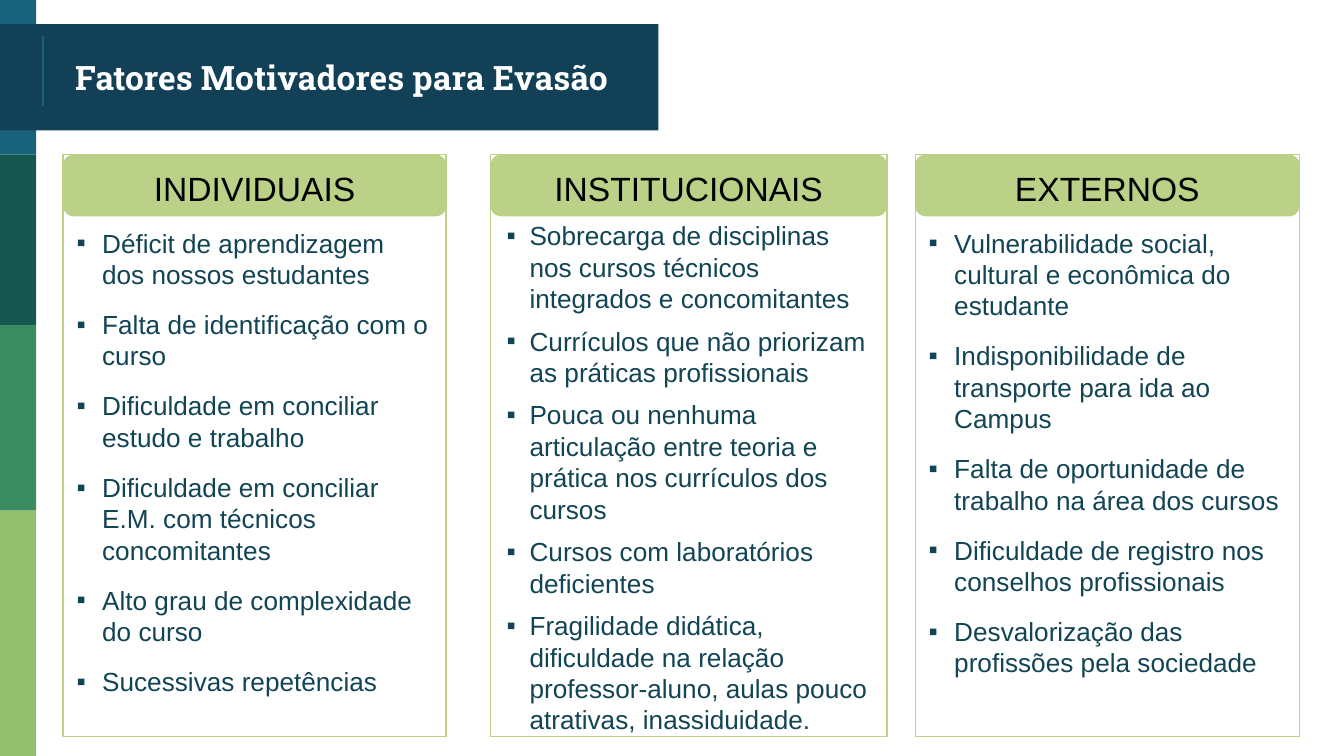
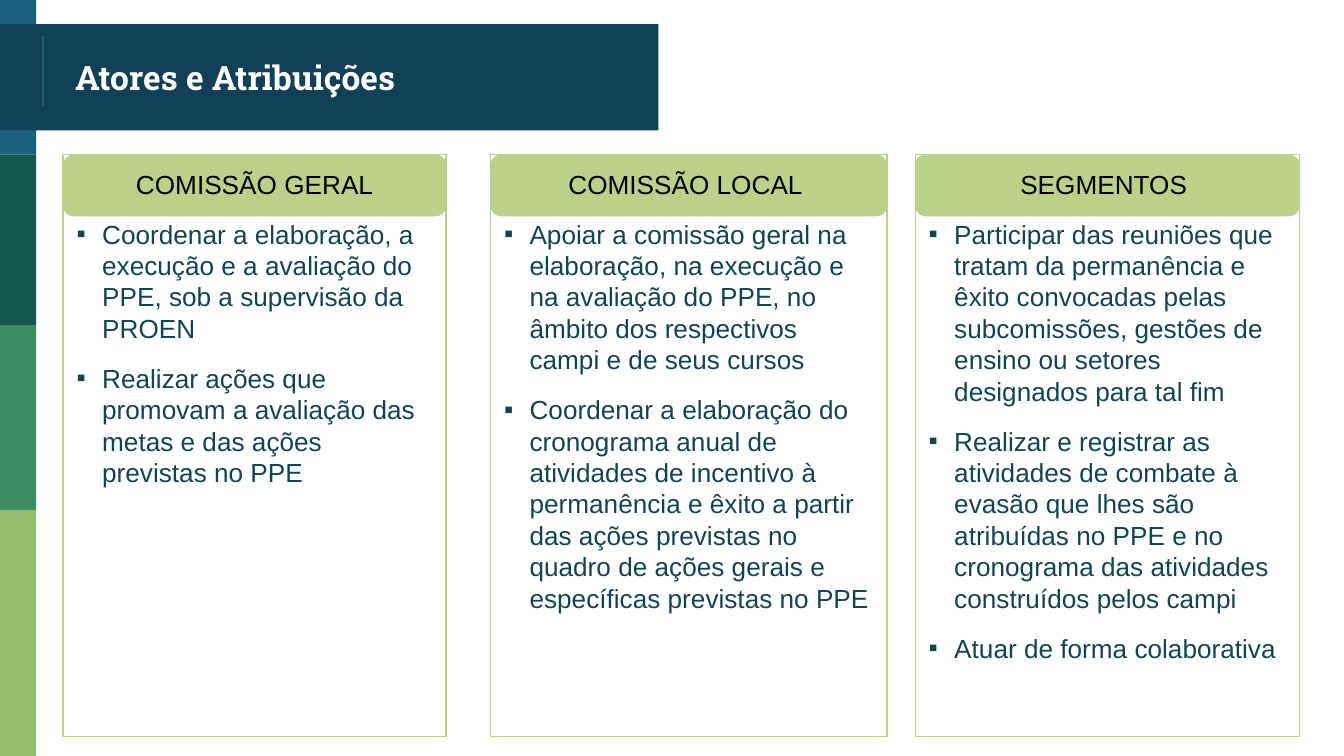
from itertools import accumulate

from lxml.etree import SubElement
from pptx import Presentation
from pptx.dml.color import RGBColor
from pptx.enum.shapes import MSO_CONNECTOR, MSO_SHAPE
from pptx.enum.text import MSO_ANCHOR, MSO_AUTO_SIZE, PP_ALIGN
from pptx.oxml.ns import qn
from pptx.util import Inches, Pt

# Widescreen slide, 16:9
SLIDE_WIDTH = 10
SLIDE_HEIGHT = SLIDE_WIDTH * 9 / 16

WHITE = RGBColor(0xFF, 0xFF, 0xFF)
BLACK = RGBColor(0x00, 0x00, 0x00)
NAVY = RGBColor(0x12, 0x40, 0x57)
TEAL = RGBColor(0x18, 0x63, 0x7B)
DARK_GREEN = RGBColor(0x16, 0x57, 0x51)
GREEN = RGBColor(0x3B, 0x8D, 0x61)
LIGHT_GREEN = RGBColor(0x94, 0xBF, 0x6E)
INK = RGBColor(0x11, 0x44, 0x54)
LIME = RGBColor(0xBB, 0xD1, 0x87)
PALE_LIME = RGBColor(0xBB, 0xD1, 0x89)

TITLE_FONT, BODY_FONT = "Roboto Slab", "Arial"

# Boxes are left, top, width, height in inches
SIDEBAR_WIDTH = 0.27
SIDEBAR_TILES = [(TEAL, 0), (DARK_GREEN, 1.15), (GREEN, 2.42), (LIGHT_GREEN, 3.8)]
TITLE_BAND = (0, 0.18, 4.9, 0.79)
TITLE_BOX = (0.46, 0.32, 4.3, 0.51)
COLUMNS = [(0.47, 2.85), (3.65, 2.95), (6.81, 2.86)]
COLUMN_TOP, COLUMN_HEIGHT, HEADER_HEIGHT = 1.15, 4.33, 0.46
PADDING, INDENT = 0.1, 0.19

COMPARISON_LAYOUT = 4
COLUMN_PLACEHOLDERS = (1, 2, 3)

# Each column: heading, items, optional format of its list
SLIDES = [
    {
        "title": "Fatores Motivadores para Evasão",
        "accent": LIME,
        "heading": {"size": 18, "before": 0},
        "columns": [
            ("INDIVIDUAIS", [
                "Déficit de aprendizagem dos nossos estudantes",
                "Falta de identificação com o curso",
                "Dificuldade em conciliar estudo e trabalho",
                "Dificuldade em conciliar E.M. com técnicos concomitantes",
                "Alto grau de complexidade do curso",
                "Sucessivas repetências",
            ], {}),
            ("INSTITUCIONAIS", [
                "Sobrecarga de disciplinas nos cursos técnicos integrados e concomitantes",
                "Currículos que não priorizam as práticas profissionais",
                "Pouca ou nenhuma articulação entre teoria e prática nos currículos dos cursos",
                "Cursos com laboratórios deficientes",
                "Fragilidade didática, dificuldade na relação professor-aluno, "
                "aulas pouco atrativas, inassiduidade.",
            ], {"before": 6, "hanging": 0.17}),
            ("EXTERNOS", [
                "Vulnerabilidade social, cultural e econômica do estudante",
                "Indisponibilidade de transporte para ida ao Campus",
                "Falta de oportunidade de trabalho na área dos cursos",
                "Dificuldade de registro nos conselhos profissionais",
                "Desvalorização das profissões pela sociedade",
            ], {}),
        ],
    },
    {
        "title": "Atores e Atribuições",
        "accent": PALE_LIME,
        "heading": {"size": 14, "before": 10},
        "columns": [
            ("COMISSÃO GERAL", [
                "Coordenar a elaboração, a execução e a avaliação do PPE, "
                "sob a supervisão da PROEN",
                "Realizar ações que promovam a avaliação das metas e das ações "
                "previstas no PPE",
            ], {}),
            ("COMISSÃO LOCAL ", [
                "Apoiar a comissão geral na elaboração, na execução e na avaliação "
                "do PPE, no âmbito dos respectivos campi e de seus cursos",
                "Coordenar a elaboração do cronograma anual de atividades de incentivo "
                "à permanência e êxito a partir das ações previstas no quadro de ações "
                "gerais e específicas previstas no PPE",
            ], {}),
            ("SEGMENTOS ", [
                "Participar das reuniões que tratam da permanência e êxito convocadas "
                "pelas subcomissões, gestões de ensino ou setores designados para tal fim",
                "Realizar e registrar as atividades de combate à evasão que lhes são "
                "atribuídas no PPE e no cronograma das atividades construídos pelos campi",
                "Atuar de forma colaborativa",
            ], {}),
        ],
    },
]


def place(shape, box):
    shape.left, shape.top, shape.width, shape.height = map(Inches, box)


def add_block(slide, box, color, kind=MSO_SHAPE.RECTANGLE):
    shape = slide.shapes.add_shape(kind, *map(Inches, box))
    shape.shadow.inherit = False
    shape.fill.solid()
    shape.fill.fore_color.rgb = color
    shape.line.fill.background()
    return shape


def prepare_frame(placeholder, box, anchor):
    """Move a placeholder to its box, in front of the blocks, and set its frame."""
    place(placeholder, box)
    tree = placeholder.element.getparent()
    tree.append(placeholder.element)
    frame = placeholder.text_frame
    frame.auto_size = MSO_AUTO_SIZE.NONE
    frame.word_wrap = True
    frame.vertical_anchor = anchor
    frame.margin_left = frame.margin_right = Inches(PADDING)
    frame.margin_top = frame.margin_bottom = Inches(PADDING)
    return frame


def set_bullet(paragraph, color, indent, hanging):
    properties = paragraph._p.get_or_add_pPr()
    properties.set("marL", str(Inches(indent)))
    properties.set("indent", str(-Inches(hanging)))
    if not hanging:
        SubElement(properties, qn("a:buNone"))
        return
    bullet_color = SubElement(properties, qn("a:buClr"))
    SubElement(bullet_color, qn("a:srgbClr"), val=str(color))
    SubElement(properties, qn("a:buFont"), typeface=BODY_FONT)
    SubElement(properties, qn("a:buChar"), char="▪")


def write(paragraph, text, size=14, font=BODY_FONT, color=INK, bold=False,
          align=PP_ALIGN.LEFT, before=10, indent=0, hanging=0):
    paragraph.alignment = align
    paragraph.line_spacing = 1.0
    paragraph.space_before = Pt(before)
    paragraph.space_after = Pt(0)
    set_bullet(paragraph, color, indent, hanging)
    run = paragraph.add_run()
    run.text = text
    run.font.name = font
    run.font.size = Pt(size)
    run.font.bold = bold
    run.font.color.rgb = color


def add_shared_bands(slide, layout):
    """Draw the sidebar and title band once and hand them to the layout."""
    tops = [top for _, top in SIDEBAR_TILES]
    bottoms = tops[1:] + [SLIDE_HEIGHT]
    bands = [add_block(slide, (0, top, SIDEBAR_WIDTH, bottom - top), color)
             for (color, top), bottom in zip(SIDEBAR_TILES, bottoms)]
    bands.append(add_block(slide, TITLE_BAND, NAVY))

    # Thin rule beside the title
    rule = slide.shapes.add_connector(
        MSO_CONNECTOR.STRAIGHT, *map(Inches, (0.32, 0.27, 0.32, 0.79)))
    rule.line.color.rgb = TEAL
    rule.line.width = Pt(0.75)
    SubElement(rule.element.spPr, qn("a:effectLst"))
    bands.append(rule)

    layout_tree = layout.shapes.element
    for number, band in enumerate(bands):
        band.element.xpath(".//p:cNvPr")[0].set("id", str(100 + number))
        layout_tree.insert(2 + number, band.element)


def add_title(slide, text):
    frame = prepare_frame(slide.shapes.title, TITLE_BOX, MSO_ANCHOR.MIDDLE)
    write(frame.paragraphs[0], text, size=18, font=TITLE_FONT, color=WHITE,
          bold=True, before=0)


def add_column(slide, placeholder, box, accent, heading, heading_format, items, item_format):
    left, top, width, _ = box
    header = add_block(slide, (left, top, width, HEADER_HEIGHT), accent,
                       MSO_SHAPE.ROUNDED_RECTANGLE)
    header.adjustments[0] = 0.17

    # Outlined panel holding the heading and the list
    frame = prepare_frame(placeholder, box, MSO_ANCHOR.TOP)
    placeholder.line.color.rgb = accent
    placeholder.line.width = Pt(0.75)
    write(frame.paragraphs[0], heading, color=BLACK, align=PP_ALIGN.CENTER, **heading_format)
    for item in items:
        write(frame.add_paragraph(), item,
              **{"indent": INDENT, "hanging": INDENT, **item_format})


def fill_column_slide(slide, content):
    placeholders = {shape.placeholder_format.idx: shape for shape in slide.placeholders}
    for index, (left, width), (heading, items, item_format) in zip(
            COLUMN_PLACEHOLDERS, COLUMNS, content["columns"]):
        add_column(slide, placeholders[index], (left, COLUMN_TOP, width, COLUMN_HEIGHT),
                   content["accent"], heading, content["heading"], items, item_format)
    add_title(slide, content["title"])

    # Remove the placeholder that no column uses
    for index, placeholder in placeholders.items():
        if index and index not in COLUMN_PLACEHOLDERS:
            placeholder.element.getparent().remove(placeholder.element)


def main():
    presentation = Presentation()
    presentation.slide_width = Inches(SLIDE_WIDTH)
    presentation.slide_height = Inches(SLIDE_HEIGHT)
    layout = presentation.slide_layouts[COMPARISON_LAYOUT]
    slides = [presentation.slides.add_slide(layout) for _ in SLIDES]
    add_shared_bands(slides[0], layout)
    for slide, content in zip(slides, SLIDES):
        fill_column_slide(slide, content)
    presentation.save("out.pptx")


if __name__ == "__main__":
    main()
